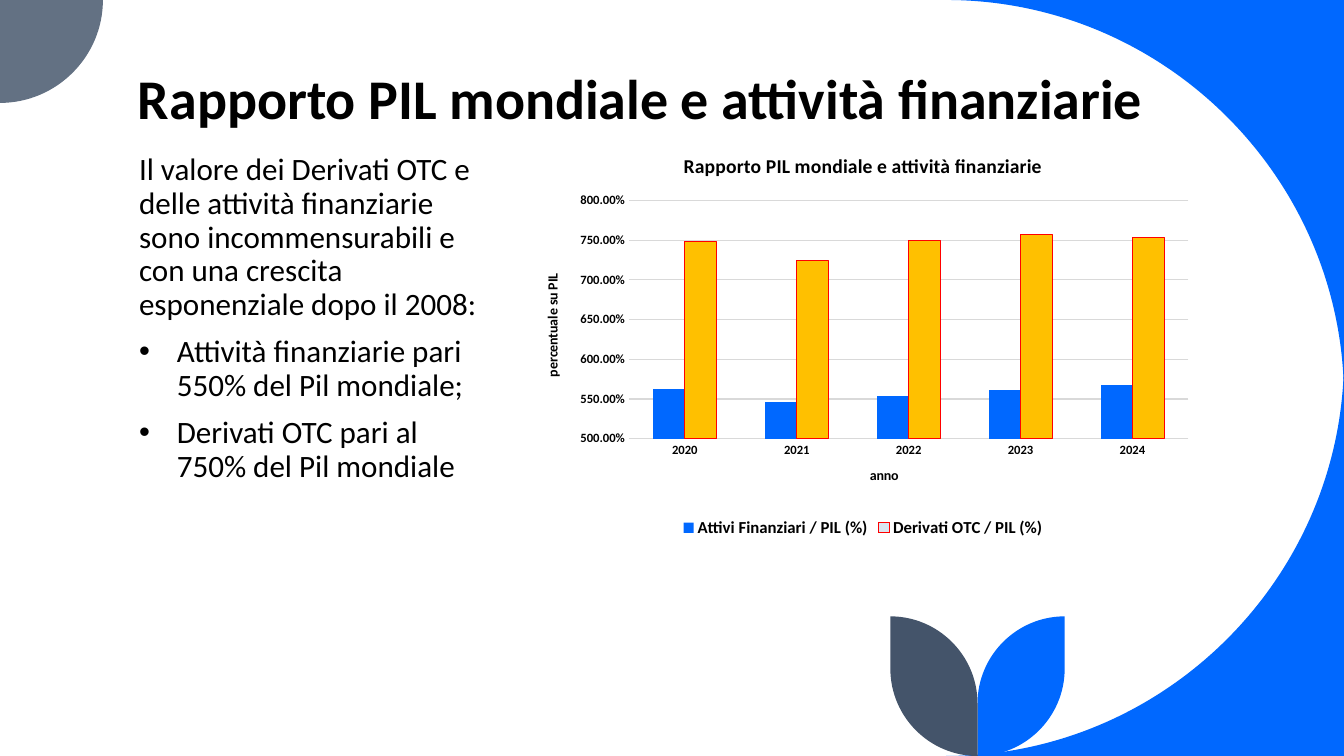
from lxml.etree import SubElement
from pptx import Presentation
from pptx.chart.data import CategoryChartData
from pptx.dml.color import RGBColor
from pptx.enum.chart import XL_CHART_TYPE, XL_LEGEND_POSITION, XL_TICK_MARK
from pptx.enum.text import MSO_ANCHOR
from pptx.oxml.ns import qn
from pptx.util import Pt

PX = 9525  # EMU in one px: 96 px to the inch
WIDTH, HEIGHT = 1280, 720
ROUND = 0.55  # pull of a curve's handles towards its corner
BLUE, SLATE, GREY, GOLD = "0068FF", "44546A", "637183", "FFC000"
PALE, RED, GRID, BLACK = "DAE5EF", "FF0000", "D9D9D9", "000000"


def px(length):
    return round(length * PX)


def color(hex_string):
    return RGBColor.from_string(hex_string)


def place(parent, box, area):
    """Fix a chart part at px inside the chart area: left, top[, width, height]."""
    for old in parent.findall(qn("c:layout")):
        parent.remove(old)
    layout = SubElement(parent, qn("c:layout"))
    parent.insert(0 if parent.find(qn("c:tx")) is None else 1, layout)
    manual = SubElement(layout, qn("c:manualLayout"))
    settings = [("layoutTarget", "inner")] if len(box) == 4 else []
    settings += [("xMode", "edge"), ("yMode", "edge")]
    settings += [(tag, length / area[i % 2])
                 for i, (tag, length) in enumerate(zip("xywh", box))]
    for tag, value in settings:
        SubElement(manual, qn("c:" + tag)).set("val", str(value))


class Deck:
    font_name = "Calibri"

    def __init__(self):
        self.prs = Presentation()
        self.prs.slide_width, self.prs.slide_height = px(WIDTH), px(HEIGHT)
        self.slide = self.prs.slides.add_slide(self.prs.slide_layouts[6])

    def style(self, font, size, bold=False):
        font.name, font.size, font.bold = self.font_name, Pt(size), bold
        font.color.rgb = color(BLACK)

    def stroke(self, line, shade):
        line.color.rgb, line.width = color(shade), Pt(0.75)

    def outline(self, start, steps, fill):
        """Each step is a pair: end point, and the corner it rounds or None."""
        builder = self.slide.shapes.build_freeform(*map(px, start))
        builder.add_line_segments([tuple(map(px, end)) for end, _ in steps], close=True)
        shape = builder.convert_to_shape()
        shape.shadow.inherit = False
        shape.fill.solid()
        shape.fill.fore_color.rgb = color(fill)
        shape.line.fill.background()

        # Turn the rounded steps into curves
        lines = list(shape._element.iter(qn("a:lnTo")))
        begin = start
        for line, (end, corner) in zip(lines, steps):
            if corner:
                line.tag = qn("a:cubicBezTo")
                for i, anchor in enumerate((begin, end)):
                    x, y = (a + ROUND * (c - a) for a, c in zip(anchor, corner))
                    handle = SubElement(line, qn("a:pt"))
                    handle.set("x", str(px(x) - shape.left))
                    handle.set("y", str(px(y) - shape.top))
                    line.insert(i, handle)
            begin = end

    def text(self, box, paragraphs, size, bold=False, spacing=0.9, before=0,
             anchor=MSO_ANCHOR.TOP):
        """Each paragraph is a pair: words, bulleted or not."""
        frame = self.slide.shapes.add_textbox(*map(px, box)).text_frame
        frame.word_wrap, frame.vertical_anchor = True, anchor
        for i, (words, bulleted) in enumerate(paragraphs):
            par = frame.paragraphs[0] if i == 0 else frame.add_paragraph()
            par.line_spacing, par.space_before = spacing, Pt(before)
            if bulleted:
                props = par._p.get_or_add_pPr()
                props.set("marL", str(px(36)))
                props.set("indent", str(-px(36)))
                SubElement(props, qn("a:buFont")).set("typeface", "Arial")
                SubElement(props, qn("a:buChar")).set("char", "•")
            run = par.add_run()
            run.text = words
            self.style(run.font, size, bold)

    def heading(self, titled, words, size):
        run = titled.text_frame.paragraphs[0].add_run()
        run.text = words
        self.style(run.font, size, True)

    def columns(self, box, plot_box, title, years, series):
        data = CategoryChartData(number_format="0.00%")
        data.categories = years
        for name, values, *_ in series:
            data.add_series(name, values)
        chart = self.slide.shapes.add_chart(
            XL_CHART_TYPE.COLUMN_CLUSTERED, *map(px, box), data).chart
        self.style(chart.font, 10)
        chart.has_title = True
        self.heading(chart.chart_title, title, 14)
        chart.chart_title.include_in_layout = False

        # Columns
        plot = chart.plots[0]
        plot.gap_width, plot.overlap, plot.vary_by_categories = 150, 0, False
        for bars, (_, values, fill, point_fill, edge) in zip(plot.series, series):
            bars.invert_if_negative = False
            formats = [(bars.format, fill)]
            if point_fill:
                formats += [(bars.points[i].format, point_fill)
                            for i in range(len(values))]
            for look, shade in formats:
                look.fill.solid()
                look.fill.fore_color.rgb = color(shade)
                if edge:
                    self.stroke(look.line, edge)
        place(chart._chartSpace.chart.plotArea, plot_box, box[2:])

        # Legend
        chart.has_legend = True
        chart.legend.position = XL_LEGEND_POSITION.BOTTOM
        chart.legend.include_in_layout = False
        self.style(chart.legend.font, 12, True)
        return chart

    def axis(self, axis, title, spot, area):
        axis.major_tick_mark = axis.minor_tick_mark = XL_TICK_MARK.NONE
        self.style(axis.tick_labels.font, 9, True)
        axis.has_title = True
        self.heading(axis.axis_title, title, 10)
        place(axis.axis_title._element, spot, area)


def main():
    deck = Deck()

    # Blue corners on the right, around a large circle
    radius = 379
    for edge, side in ((0, 1), (HEIGHT, -1)):
        corner = (WIDTH, edge)
        deck.outline(corner, [((WIDTH - radius, edge), None),
                              ((WIDTH, edge + side * radius), corner)], BLUE)

    # Quarter disc at the top left
    deck.outline((0, 0), [((98, 0), None), ((0, 98), (98, 98))], GREY)

    # Two mirrored leaves on a common stem
    stem, leaf_top, leaf = 931, 587, 83
    for side, fill in ((1, BLUE), (-1, SLATE)):
        tip = stem + side * leaf
        deck.outline((tip, leaf_top), [
            ((tip, HEIGHT - leaf), None),
            ((stem, HEIGHT), (tip, HEIGHT)),
            ((stem, leaf_top + leaf), None),
            ((tip, leaf_top), (stem, leaf_top)),
        ], fill)

    # Title and text
    title = "Rapporto PIL mondiale e attività finanziarie"
    deck.text((122, 15, 1008, 114), [(title, False)], 40, bold=True,
              spacing=0.8, anchor=MSO_ANCHOR.BOTTOM)
    deck.text((123, 142, 348, 420), [
        ("Il valore dei Derivati OTC e delle attività finanziarie sono "
         "incommensurabili e con una crescita esponenziale dopo il 2008:", False),
        ("Attività finanziarie pari 550% del Pil mondiale;", True),
        ("Derivati OTC pari al 750% del Pil mondiale", True),
    ], 22.2, before=10)

    # Chart
    area = (648, 387)
    chart = deck.columns(
        (498, 129, *area), (101, 62, 533, 227), title,
        ["2020", "2021", "2022", "2023", "2024"], [
            ("Attivi Finanziari / PIL (%)", (5.62, 5.46, 5.54, 5.61, 5.67),
             BLUE, None, None),
            ("Derivati OTC / PIL (%)", (7.48, 7.24, 7.49, 7.57, 7.53),
             PALE, GOLD, RED),
        ])
    years, share = chart.category_axis, chart.value_axis
    deck.axis(years, "anno", (328, 313), area)
    deck.stroke(years.format.line, GRID)
    deck.axis(share, "percentuale su PIL", (17, 129), area)
    share.format.line.fill.background()
    share.minimum_scale, share.maximum_scale, share.major_unit = 5, 8, 0.5
    share.tick_labels.number_format = "0.00%"
    share.tick_labels.number_format_is_linked = False
    deck.stroke(share.major_gridlines.format.line, GRID)

    deck.prs.save("out.pptx")


if __name__ == "__main__":
    main()
